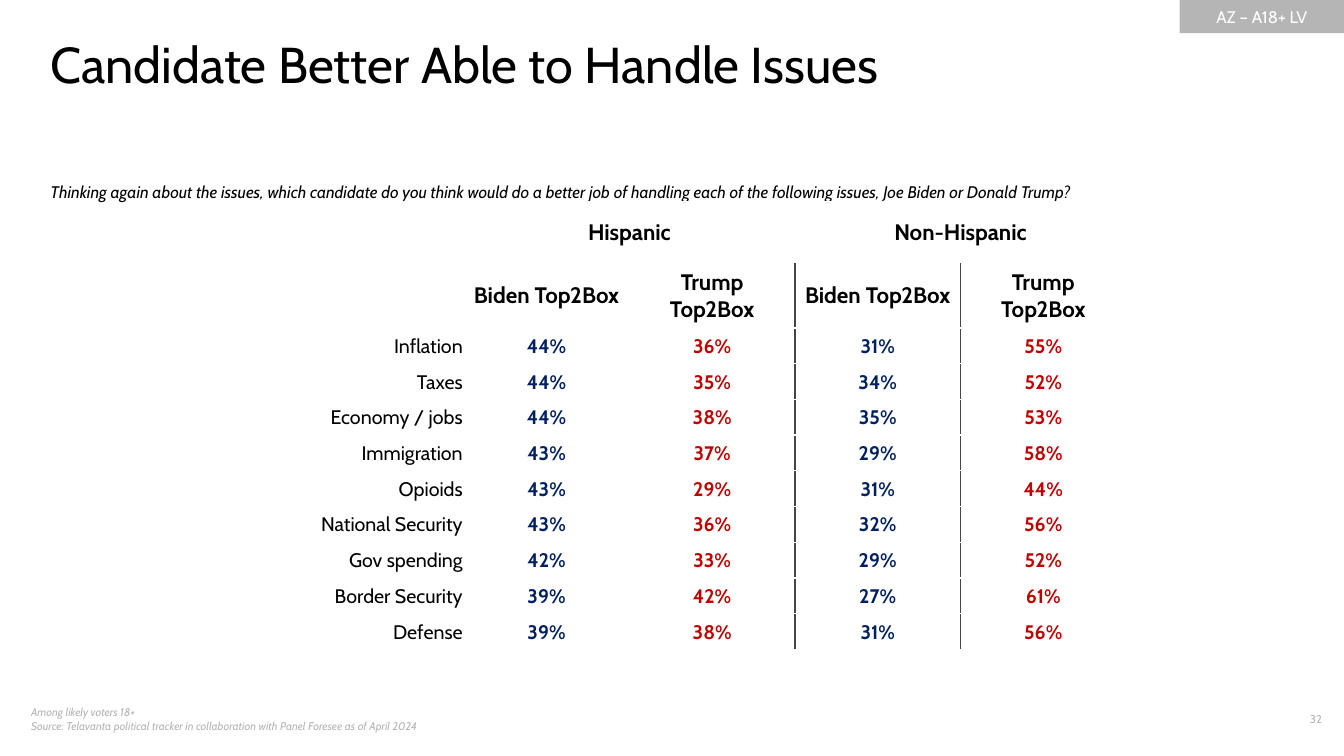
from dataclasses import dataclass

from lxml.etree import SubElement
from pptx import Presentation
from pptx.dml.color import RGBColor
from pptx.enum.shapes import MSO_SHAPE as Shape
from pptx.enum.text import MSO_ANCHOR as Anchor, PP_ALIGN as Align
from pptx.oxml.ns import qn
from pptx.util import Inches, Pt


@dataclass(frozen=True)
class Theme:
    font: str = "Cabin"
    black: str = "000000"
    white: str = "FFFFFF"
    grey: str = "B5B5B5"
    rule: str = "454545"
    biden: str = "002060"
    trump: str = "C00000"
    title: int = 36
    header: int = 16
    body: int = 14
    note: int = 12
    footer: int = 8


THEME = Theme()

GROUPS = ("Hispanic", "Non-Hispanic")
CANDIDATES = (("Biden Top2Box", THEME.biden), ("Trump Top2Box", THEME.trump))
ISSUES = (
    ("Inflation", 44, 36, 31, 55),
    ("Taxes", 44, 35, 34, 52),
    ("Economy / jobs", 44, 38, 35, 53),
    ("Immigration", 43, 37, 29, 58),
    ("Opioids", 43, 29, 31, 44),
    ("National Security", 43, 36, 32, 56),
    ("Gov spending", 42, 33, 29, 52),
    ("Border Security", 39, 42, 27, 61),
    ("Defense", 39, 38, 31, 56),
)
LABEL_WIDTH = 2.43
TABLE_WIDTH = 9
TABLE_HEIGHT = 4.43
HEADER_HEIGHT = 0.62


def write_text(frame, text, size=THEME.body, color=THEME.black, align=Align.LEFT,
               bold=False, italic=False):
    paragraph = frame.paragraphs[0]
    paragraph.text = text
    paragraph.alignment = align
    for line_break in paragraph._p.findall(qn("a:br")):
        SubElement(line_break, qn("a:rPr"), sz=str(size * 100))
    for run in paragraph.runs:
        run.font.name = THEME.font
        run.font.size = Pt(size)
        run.font.bold = bold
        run.font.italic = italic
        run.font.color.rgb = RGBColor.from_string(color)


def add_text(slide, text, left, top, width, height, inset=True, **text_format):
    box = slide.shapes.add_textbox(Inches(left), Inches(top), Inches(width), Inches(height))
    frame = box.text_frame
    frame.word_wrap = True
    if not inset:
        frame.margin_left = frame.margin_right = 0
        frame.margin_top = frame.margin_bottom = 0
    write_text(frame, text, **text_format)


def add_tag(slide, text):
    shape = slide.shapes.add_shape(Shape.RECTANGLE, Inches(11.7), 0, Inches(1.63), Inches(0.33))
    shape.shadow.inherit = False
    shape.fill.solid()
    shape.fill.fore_color.rgb = RGBColor.from_string(THEME.grey)
    shape.line.fill.background()
    shape.text_frame.vertical_anchor = Anchor.MIDDLE
    write_text(shape.text_frame, text, size=THEME.note, color=THEME.white, align=Align.CENTER)


def add_border(cell, side):
    properties = cell._tc.get_or_add_tcPr()
    line = SubElement(properties, qn(f"a:{side}"), w=str(Pt(1.5)))
    fill = SubElement(line, qn("a:solidFill"))
    SubElement(fill, qn("a:srgbClr"), val=THEME.rule)


def fill_cell(cell, text, **text_format):
    cell.vertical_anchor = Anchor.MIDDLE
    write_text(cell.text_frame, text, **text_format)


def fill_headers(table):
    header_format = dict(size=THEME.header, align=Align.CENTER, bold=True)
    for group_index, group in enumerate(GROUPS):
        first = 1 + group_index * len(CANDIDATES)
        table.cell(0, first).merge(table.cell(0, first + 1))
        fill_cell(table.cell(0, first), group, **header_format)
        for offset, (candidate, _) in enumerate(CANDIDATES):
            fill_cell(table.cell(1, first + offset), candidate, **header_format)


def fill_issues(table):
    for row, (issue, *shares) in enumerate(ISSUES, start=2):
        fill_cell(table.cell(row, 0), issue, align=Align.RIGHT)
        for column, share in enumerate(shares, start=1):
            color = CANDIDATES[(column - 1) % len(CANDIDATES)][1]
            fill_cell(table.cell(row, column), f"{share}%", color=color,
                      align=Align.CENTER, bold=True)
        for cell in table.rows[row].cells:
            cell.margin_left = cell.margin_right = cell.margin_top = Inches(0.01)
            cell.margin_bottom = 0


def add_issue_table(slide):
    value_columns = len(GROUPS) * len(CANDIDATES)
    table = slide.shapes.add_table(
        len(ISSUES) + 2, value_columns + 1,
        Inches(2.17), Inches(2), Inches(TABLE_WIDTH), Inches(TABLE_HEIGHT)).table
    table.first_row = table.horz_banding = False
    for index, column in enumerate(table.columns):
        value_width = (TABLE_WIDTH - LABEL_WIDTH) / value_columns
        column.width = Inches(value_width if index else LABEL_WIDTH)
    for index, row in enumerate(table.rows):
        issue_height = (TABLE_HEIGHT - 2 * HEADER_HEIGHT) / len(ISSUES)
        row.height = Inches(issue_height if index > 1 else HEADER_HEIGHT)
    fill_headers(table)
    fill_issues(table)
    for row in range(1, len(table.rows)):
        add_border(table.cell(row, 2), "lnR")
        add_border(table.cell(row, 3), "lnL")
    for cell in table.iter_cells():
        cell.fill.background()


def main():
    presentation = Presentation()
    presentation.slide_width = Inches(13.33)
    presentation.slide_height = Inches(7.5)
    slide = presentation.slides.add_slide(presentation.slide_layouts[6])

    add_tag(slide, "AZ – A18+ LV")
    add_text(slide, "Among likely voters 18+\vSource: Telavanta political tracker in "
             "collaboration with Panel Foresee as of April 2024",
             0.21, 6.95, 5.11, 0.4, size=THEME.footer, color=THEME.grey, italic=True)
    add_text(slide, "32", 12.33, 7.02, 0.88, 0.27,
             size=THEME.footer, color=THEME.grey, align=Align.RIGHT)
    add_text(slide, "Candidate Better Able to Handle Issues",
             0.5, 0.33, 12, 0.61, inset=False, size=THEME.title)
    add_text(slide, "Thinking again about the issues, which candidate do you think would do a "
             "better job of handling each of the following issues, Joe Biden or Donald Trump?",
             0.5, 1.8, 11.01, 0.2, inset=False, size=THEME.note, italic=True)
    add_issue_table(slide)

    presentation.save("out.pptx")


if __name__ == "__main__":
    main()
